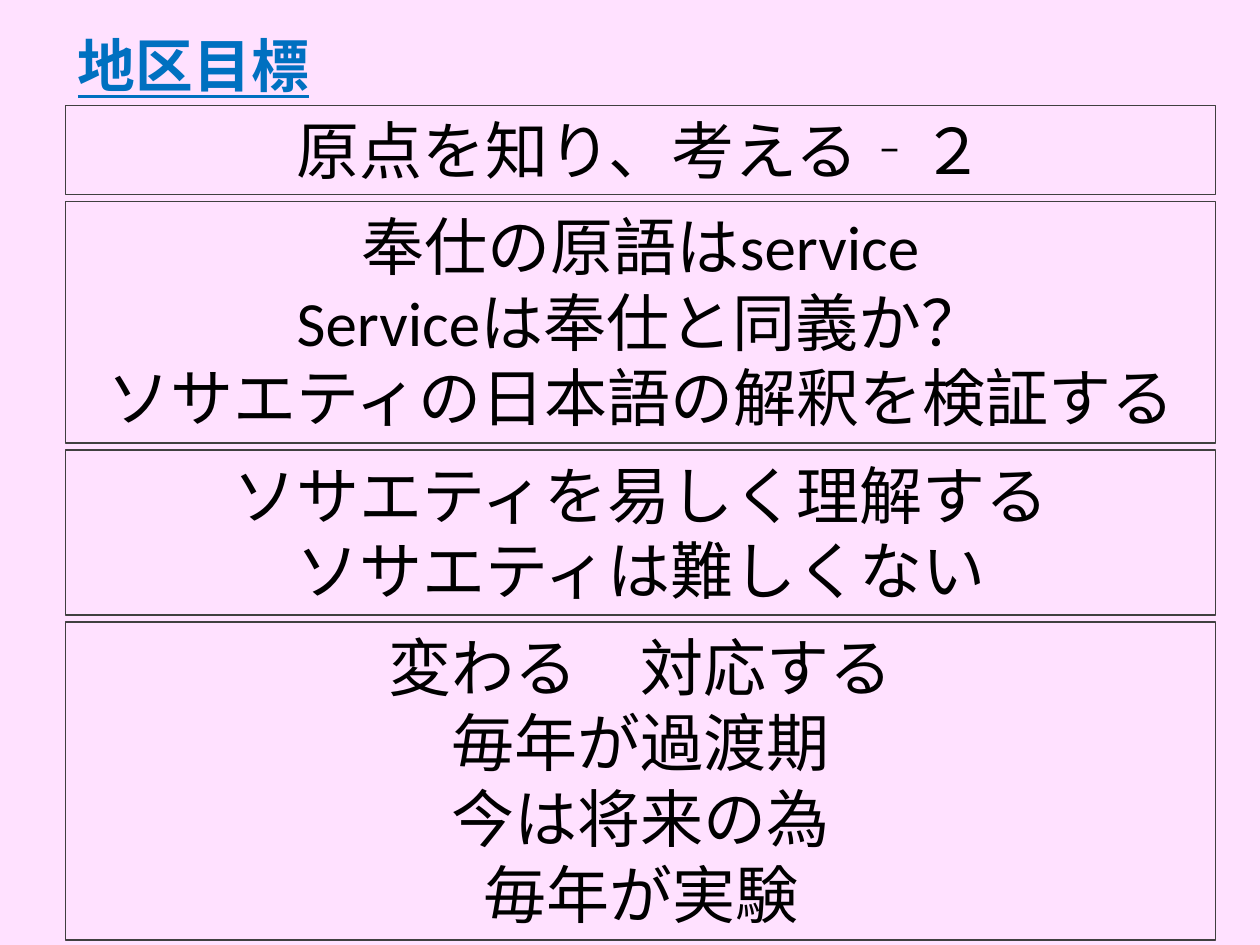
from pptx import Presentation
from pptx.dml.color import RGBColor
from pptx.enum import text as t
from pptx.util import Cm, Pt

PINK = RGBColor(0xFF, 0xE1, 0xFF)
BLUE = RGBColor(0x00, 0x70, 0xC0)
BLACK = RGBColor(0x00, 0x00, 0x00)
GRAY = RGBColor(0x40, 0x40, 0x40)

LEFT, WIDTH = 1.32, 23.19
LINE_HEIGHT, PADDING, GAP = 1.54, 0.25, 0.14

goals = [
    ["原点を知り、考える‐２"],
    ["奉仕の原語はservice", "Serviceは奉仕と同義か？", "ソサエティの日本語の解釈を検証する"],
    ["ソサエティを易しく理解する", "ソサエティは難しくない"],
    ["変わる　対応する", "毎年が過渡期", "今は将来の為", "毎年が実験"],
]

prs = Presentation()
prs.slide_width, prs.slide_height = Cm(25.4), Cm(19.05)
slide = prs.slides.add_slide(prs.slide_layouts[6])
slide.background.fill.solid()
slide.background.fill.fore_color.rgb = PINK


def add_text(lines, top, width, height, size=36, color=BLACK, bold=False,
             underline=False, align=t.PP_ALIGN.CENTER, spacing=None,
             anchor=t.MSO_ANCHOR.TOP):
    """Add a text box with one paragraph per line and return it."""
    box = slide.shapes.add_textbox(Cm(LEFT), Cm(top), Cm(width), Cm(height))
    frame = box.text_frame
    frame.word_wrap = True
    frame.vertical_anchor = anchor
    frame.text = "\n".join(lines)
    for paragraph in frame.paragraphs:
        paragraph.alignment = align
        paragraph.line_spacing = spacing
        font = paragraph.runs[0].font
        font.name, font.size = "Calibri", Pt(size)
        font.bold, font.underline = bold, underline
        font.color.rgb = color
    return box


add_text(["地区目標"], 0.33, 21.9, 2.11, size=33, color=BLUE, bold=True,
         underline=True, align=t.PP_ALIGN.LEFT, spacing=0.9,
         anchor=t.MSO_ANCHOR.MIDDLE)

top = 2.13
for lines in goals:
    height = PADDING + LINE_HEIGHT * len(lines)
    goal = add_text(lines, top, WIDTH, height)
    goal.text_frame.auto_size = t.MSO_AUTO_SIZE.SHAPE_TO_FIT_TEXT
    goal.line.color.rgb = GRAY
    goal.line.width = Pt(0.75)
    top += height + GAP

prs.save("out.pptx")
